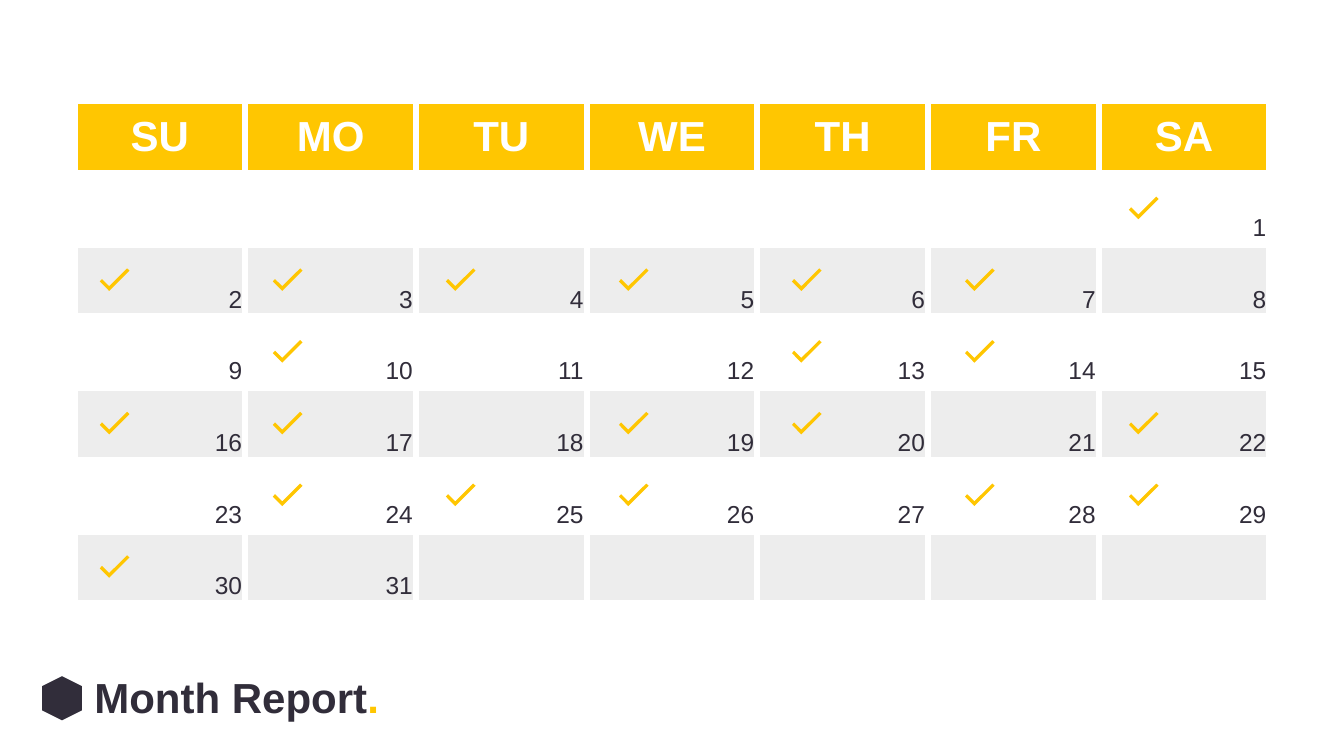
from lxml.etree import SubElement
from pptx import Presentation
from pptx.dml.color import RGBColor
from pptx.enum.shapes import MSO_SHAPE
from pptx.enum.text import MSO_ANCHOR, MSO_AUTO_SIZE, PP_ALIGN
from pptx.oxml.ns import qn
from pptx.util import Pt

HUES = {"gold": "FFC601", "dark": "312D3A", "gray": "EDEDED", "white": "FFFFFF"}
DAYS = ["SU", "MO", "TU", "WE", "TH", "FR", "SA"]
DONE = [1, 2, 3, 4, 5, 6, 7, 10, 13, 14, 16, 17, 19, 20, 22, 24, 25, 26, 28, 29, 30]
TICK = [(13.4, 25.4), (3.1, 15.2), (0, 18.7), (13.4, 32.2), (42.4, 3.2), (39, 0)]
HEAD = {"size": Pt(60), "bold": True, "name": "Arial"}
BODY = {"size": Pt(35), "bold": False, "name": "Arial"}
PAD = {"margin_" + side: Pt(4.5) for side in ("left", "top", "right", "bottom")}
ROW = 102.45


def slot(day):
    """Return the week and weekday of a date in a month that starts on Saturday."""
    return divmod(day + 5, 7)


def put(item, form):
    """Set every format value on the item."""
    for key, value in form.items():
        setattr(item, key, value)


def paint(fill, hue):
    """Fill with a named colour."""
    fill.solid()
    fill.fore_color.rgb = RGBColor.from_string(HUES[hue])


class Board:
    """Hold the style and the current slide."""

    def __init__(self, slide):
        """Keep the slide's shapes."""
        self.shapes = slide.shapes

    def label(self, para, text, hue, form):
        """Add a styled run to a paragraph."""
        run = para.add_run()
        run.text = text
        put(run.font, form)
        run.font.color.rgb = RGBColor.from_string(HUES[hue])

    def frame(self, cell):
        """Draw white borders round a cell."""
        props = cell._tc.get_or_add_tcPr()
        for spot, tag in enumerate(("a:lnL", "a:lnR", "a:lnT", "a:lnB")):
            line = SubElement(props, qn(tag), w=str(Pt(10)))
            props.insert(spot, line)
            fill = SubElement(line, qn("a:solidFill"))
            SubElement(fill, qn("a:srgbClr"), val=HUES["white"])

    def month(self, left, top, wide, high):
        """Add the calendar table."""
        table = self.shapes.add_table(7, 7, Pt(left), Pt(top), Pt(wide), Pt(high)).table
        put(table, {"first_row": False, "horz_banding": False})
        dates = {slot(day): str(day) for day in range(1, 32)}
        for r in range(7):
            table.rows[r].height = Pt(high / 7)
            for c, name in enumerate(DAYS):
                table.columns[c].width = Pt(wide / 7)
                cell = table.cell(r, c)
                hue = "gold" if r == 0 else "white" if r % 2 else "gray"
                paint(cell.fill, hue)
                self.frame(cell)
                put(cell, PAD)
                para = cell.text_frame.paragraphs[0]
                if r == 0:
                    cell.vertical_anchor = MSO_ANCHOR.MIDDLE
                    para.alignment = PP_ALIGN.CENTER
                    self.label(para, name, "white", HEAD)
                elif (r - 1, c) in dates:
                    cell.vertical_anchor = MSO_ANCHOR.BOTTOM
                    para.alignment = PP_ALIGN.RIGHT
                    self.label(para, dates[r - 1, c], "dark", BODY)

    def tick(self, left, top):
        """Add a check mark."""
        spots = [(Pt(left + x), Pt(top + y)) for x, y in TICK]
        draft = self.shapes.build_freeform(*spots[0])
        draft.add_line_segments(spots[1:])
        mark = draft.convert_to_shape()
        mark.shadow.inherit = False
        paint(mark.fill, "gold")
        mark.line.fill.background()

    def badge(self, left, top, wide, high):
        """Add a plain upright hexagon."""
        shape = self.shapes.add_shape(
            MSO_SHAPE.HEXAGON, Pt(left), Pt(top), Pt(wide), Pt(high))
        shape.rotation = 90
        shape.shadow.inherit = False
        paint(shape.fill, "dark")
        shape.line.fill.background()

    def title(self, left, top, wide, high, parts):
        """Add a text line of coloured parts."""
        frame = self.shapes.add_textbox(Pt(left), Pt(top), Pt(wide), Pt(high)).text_frame
        put(frame, {**PAD, "word_wrap": False, "vertical_anchor": MSO_ANCHOR.MIDDLE,
                    "auto_size": MSO_AUTO_SIZE.SHAPE_TO_FIT_TEXT})
        for text, hue in parts:
            self.label(frame.paragraphs[0], text, hue, HEAD)


def main():
    """Build the month report."""
    deck = Presentation()
    put(deck, {"slide_width": Pt(1920), "slide_height": Pt(1080)})
    board = Board(deck.slides.add_slide(deck.slide_layouts[6]))
    board.badge(57, 969, 63, 57)
    board.title(130.3, 954.7, 418.3, 80.6, [("Month Report", "dark"), (".", "gold")])
    board.month(106.5, 144.7, 1707.1, 7 * ROW)
    for day in DONE:
        week, col = slot(day)
        board.tick(1612.8 if col == 6 else 142.6 + 247.2 * col, 281 + ROW * week)
    deck.save("out.pptx")


if __name__ == "__main__":
    main()
